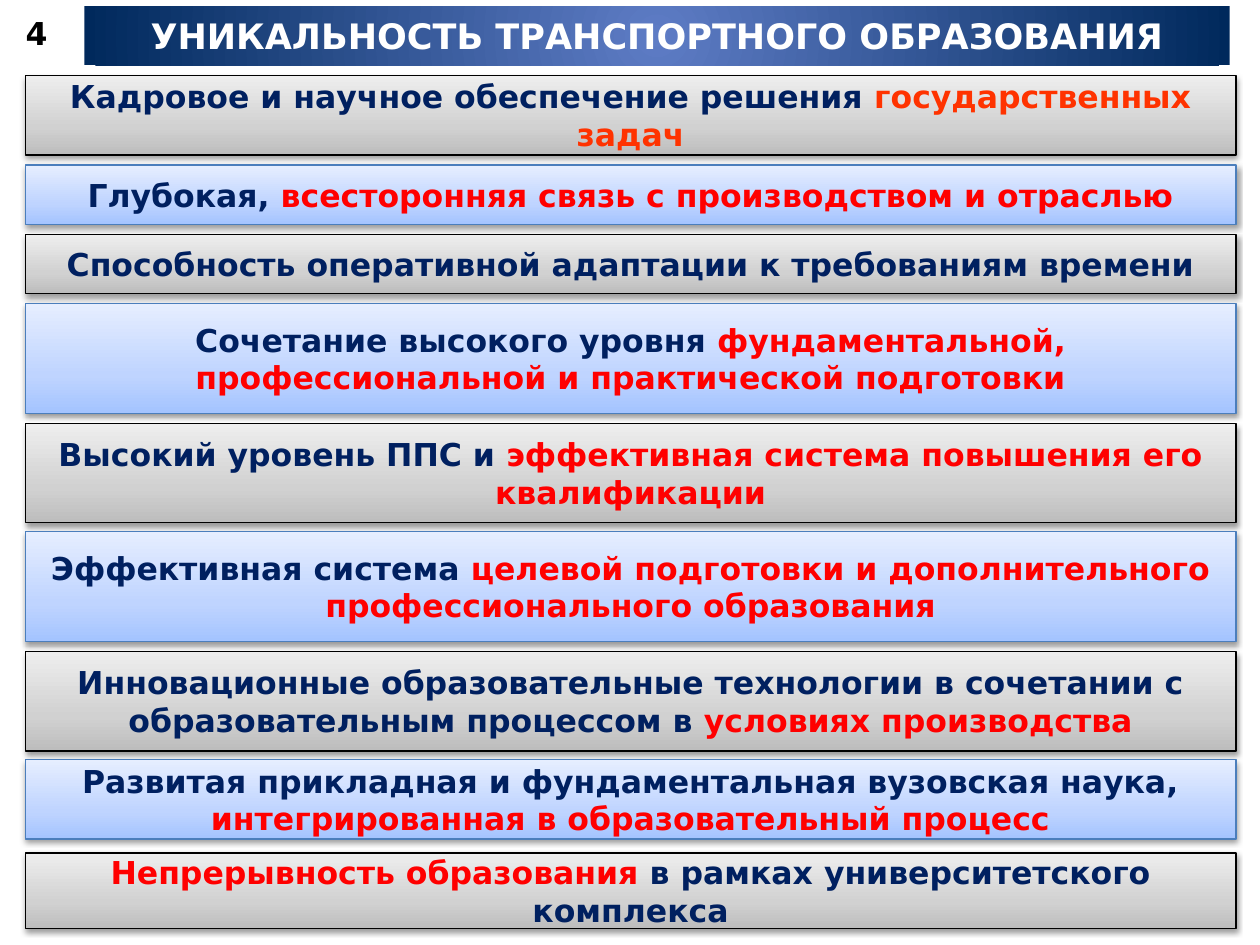
from dataclasses import dataclass

from lxml import etree
from pptx import Presentation
from pptx.dml.color import RGBColor
from pptx.enum import shapes, text
from pptx.oxml import ns
from pptx.util import Inches, Pt

COLORS = {
    "navy": "002060", "red": "FF0000", "orange": "FF3300",
    "white": "FFFFFF", "black": "000000", "blue_line": "4B7EBC",
}
FONT = "DejaVu Sans"
PANEL_LEFT, PANEL_WIDTH = 0.2, 9.61


@dataclass
class Run:
    text: str
    color: str = "navy"


@dataclass
class Style:
    stops: list[tuple[int, str]]
    line: str


@dataclass
class Panel:
    top: float
    height: float
    paragraphs: list[list[Run]]


GRAY = Style([(0, "BDBDBD"), (35, "D1D1D1"), (100, "EEEEEE")], "black")
BLUE = Style([(0, "A4C4FF"), (35, "BFD4FF"), (100, "E6EEFF")], "blue_line")
TITLE_STOPS = [(0, "5E7CC5"), (100, "00295C")]

PANELS = [
    Panel(0.6, 0.63, [[Run("Кадровое и научное обеспечение решения "),
                       Run("государственных задач", "orange")]]),
    Panel(1.31, 0.47, [[Run("Глубокая, "),
                        Run("всесторонняя связь с производством и отраслью", "red")]]),
    Panel(1.86, 0.47, [[Run("Способность оперативной адаптации к требованиям времени")]]),
    Panel(2.41, 0.87, [[Run("Сочетание высокого уровня "),
                        Run("фундаментальной, профессиональной и практической подготовки", "red")]]),
    Panel(3.36, 0.79, [[Run("Высокий уровень ППС и "),
                        Run("эффективная система повышения его квалификации", "red")]]),
    Panel(4.22, 0.87, [[Run("Эффективная система "),
                        Run("целевой подготовки и дополнительного", "red")],
                       [Run("профессионального образования", "red")]]),
    Panel(5.17, 0.79, [[Run("Инновационные образовательные технологии в сочетании с "
                            "образовательным процессом в "),
                        Run("условиях производства", "red")]]),
    Panel(6.03, 0.63, [[Run("Развитая прикладная и фундаментальная вузовская наука, "),
                        Run("интегрированная в образовательный процесс", "red")]]),
    Panel(6.77, 0.6, [[Run("Непрерывность образования ", "red"),
                       Run("в рамках университетского комплекса")]]),
]


def add_element(parent, tag: str, **attributes):
    element = etree.SubElement(parent, ns.qn(tag))
    for name, value in attributes.items():
        element.set(name, str(value))
    return element


def set_gradient(shape, stops: list[tuple[int, str]], radial: bool = False) -> None:
    shape.fill.gradient()
    gradient = shape.element.spPr.find(ns.qn("a:gradFill"))
    for child in list(gradient):
        gradient.remove(child)
    stop_list = add_element(gradient, "a:gsLst")
    for position, color in stops:
        stop = add_element(stop_list, "a:gs", pos=position * 1000)
        add_element(stop, "a:srgbClr", val=color)
    if radial:
        path = add_element(gradient, "a:path", path="circle")
        add_element(path, "a:fillToRect", l=50000, t=50000, r=50000, b=50000)
    else:
        add_element(gradient, "a:lin", ang=270 * 60000, scaled=0)


def add_shadow(effects) -> None:
    shadow = add_element(effects, "a:outerShdw", blurRad=Pt(3.1), dist=Pt(1.6),
                         dir=90 * 60000, rotWithShape=0)
    color = add_element(shadow, "a:srgbClr", val=COLORS["black"])
    add_element(color, "a:alpha", val=38000)


def write_text(shape, paragraphs: list[list[Run]], size: float = 18) -> None:
    frame = shape.text_frame
    settings = {"word_wrap": True, "auto_size": text.MSO_AUTO_SIZE.NONE,
                "vertical_anchor": text.MSO_ANCHOR.MIDDLE}
    for name, value in settings.items():
        setattr(frame, name, value)
    for index, runs in enumerate(paragraphs):
        paragraph = frame.add_paragraph() if index else frame.paragraphs[0]
        paragraph.alignment = text.PP_ALIGN.CENTER
        for item in runs:
            run = paragraph.add_run()
            run.text = item.text
            for name, value in {"name": FONT, "size": Pt(size), "bold": True}.items():
                setattr(run.font, name, value)
            run.font.color.rgb = RGBColor.from_string(COLORS[item.color])


def add_title(slide) -> None:
    title = slide.shapes.title
    place = {"left": 0.67, "top": 0.05, "width": 9.09, "height": 0.47}
    for name, value in place.items():
        setattr(title, name, Inches(value))
    set_gradient(title, TITLE_STOPS, radial=True)
    write_text(title, [[Run("УНИКАЛЬНОСТЬ ТРАНСПОРТНОГО ОБРАЗОВАНИЯ", "white")]], 20)
    margins = {"margin_left": 0.06, "margin_right": 0.06,
               "margin_top": 0.03, "margin_bottom": 0.03}
    for name, value in margins.items():
        setattr(title.text_frame, name, Inches(value))


def add_panel(slide, panel: Panel, style: Style) -> None:
    shape = slide.shapes.add_shape(
        shapes.MSO_SHAPE.RECTANGLE, Inches(PANEL_LEFT), Inches(panel.top),
        Inches(PANEL_WIDTH), Inches(panel.height))
    set_gradient(shape, style.stops)
    shape.line.color.rgb = RGBColor.from_string(COLORS[style.line])
    shape.line.width = Pt(0.75)
    shape.shadow.inherit = False
    add_shadow(shape.element.spPr.find(ns.qn("a:effectLst")))
    write_text(shape, panel.paragraphs)


def add_slide_number(slide) -> None:
    box = slide.shapes.add_textbox(Inches(-0.2), Inches(0.08), Inches(0.98), Inches(0.36))
    write_text(box, [[Run("4", "black")]])
    # The text shadow belongs right after the text fill
    fill = next(box.element.iter(ns.qn("a:rPr"))).find(ns.qn("a:solidFill"))
    effects = etree.Element(ns.qn("a:effectLst"))
    add_shadow(effects)
    fill.addnext(effects)


def main() -> None:
    presentation = Presentation()
    presentation.slide_width, presentation.slide_height = Inches(10), Inches(7.5)
    slide = presentation.slides.add_slide(presentation.slide_layouts[5])

    # Heading, then panels in alternating styles, then the number
    add_title(slide)
    for index, panel in enumerate(PANELS):
        add_panel(slide, panel, BLUE if index % 2 else GRAY)
    add_slide_number(slide)

    presentation.save("out.pptx")


if __name__ == "__main__":
    main()
